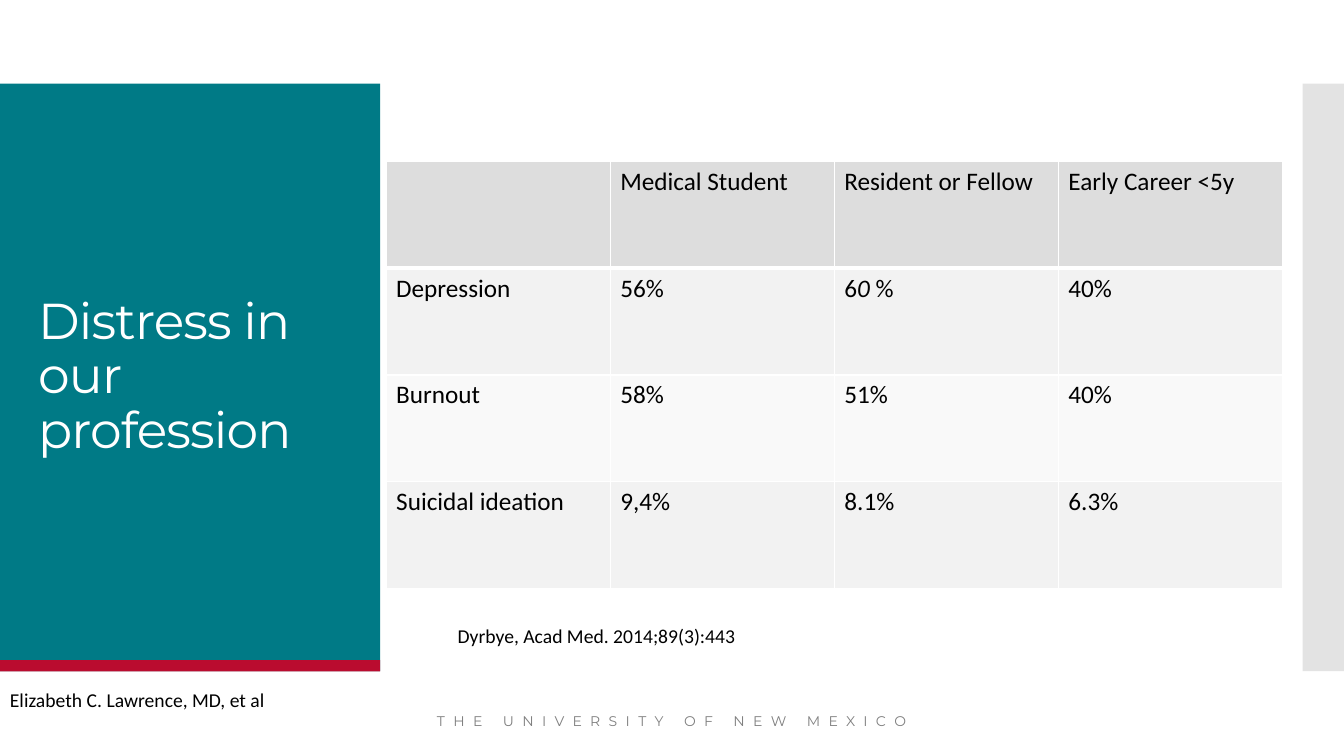
from lxml.etree import SubElement
from pptx import Presentation
from pptx.dml.color import RGBColor
from pptx.enum.shapes import MSO_SHAPE
from pptx.enum.text import MSO_ANCHOR, MSO_AUTO_SIZE, PP_ALIGN
from pptx.oxml.ns import qn
from pptx.util import Inches, Pt

COLORS = {
    "teal": "007A86",
    "red": "BA0C2F",
    "side": "C8C8C8",
    "white": "FFFFFF",
    "black": "000000",
    "footer": "808080",
    "header": "DDDDDD",
    "odd": "F2F2F2",
    "even": "F9F9F9",
}
ROWS = [
    ["", "Medical Student", "Resident or Fellow", "Early Career <5y"],
    ["Depression", "56%", "6*0 *%", "40%"],
    ["Burnout", "58%", "51%", "40%"],
    ["Suicidal ideation", "9,4%", "8.1%", "6.3%"],
]


def rgb(name):
    """Return the named colour."""
    return RGBColor.from_string(COLORS[name])


def write_text(frame, text, size, font="Calibri", color="black", spacing=0,
               align=PP_ALIGN.LEFT, line_spacing=1.0):
    """Write one formatted paragraph; parts between asterisks are italic."""
    paragraph = frame.paragraphs[0]
    paragraph.alignment = align
    paragraph.line_spacing = line_spacing
    paragraph.font.size = Pt(size)
    for index, part in enumerate(text.split("*")):
        if not part:
            continue
        run = paragraph.add_run()
        run.text = part
        run.font.size = Pt(size)
        run.font.name = font
        run.font.color.rgb = rgb(color)
        run.font.italic = index % 2 == 1
        if spacing:
            run.font._element.set("spc", str(round(spacing * 100)))


def add_text(slide, box, text, size, anchor=MSO_ANCHOR.TOP, wrap=True,
             grow=False, **text_format):
    """Add a text box holding one paragraph."""
    shape = slide.shapes.add_textbox(*map(Inches, box))
    frame = shape.text_frame
    frame.word_wrap = wrap
    frame.vertical_anchor = anchor
    frame.auto_size = MSO_AUTO_SIZE.SHAPE_TO_FIT_TEXT if grow else MSO_AUTO_SIZE.NONE
    write_text(frame, text, size, **text_format)


def add_panel(slide, box, color, opacity=100):
    """Add a plain filled rectangle."""
    shape = slide.shapes.add_shape(MSO_SHAPE.RECTANGLE, *map(Inches, box))
    shape.shadow.inherit = False
    shape.line.fill.background()
    shape.fill.solid()
    shape.fill.fore_color.rgb = rgb(color)
    if opacity < 100:
        color_element = shape._element.spPr.find(qn("a:solidFill"))[0]
        SubElement(color_element, qn("a:alpha"), val=str(opacity * 1000))


def add_border(cell, side, width):
    """Draw a white border on one side of a cell."""
    properties = cell._tc.get_or_add_tcPr()
    line = SubElement(properties, qn(f"a:ln{side}"), w=str(Pt(width)))
    fill = SubElement(line, qn("a:solidFill"))
    SubElement(fill, qn("a:srgbClr"), val=COLORS["white"])


def add_distress_table(slide, box):
    """Add the table of distress rates by career stage."""
    frame = slide.shapes.add_table(len(ROWS), len(ROWS[0]), *map(Inches, box))
    table = frame.table
    for row_index, row in enumerate(ROWS):
        fill = "header" if row_index == 0 else "odd" if row_index % 2 else "even"
        widths = {
            "L": 1,
            "R": 1,
            "T": 3 if row_index == 1 else 1,
            "B": 3 if row_index == 0 else 1,
        }
        for column_index, text in enumerate(row):
            cell = table.cell(row_index, column_index)
            for side, width in widths.items():
                add_border(cell, side, width)
            cell.fill.solid()
            cell.fill.fore_color.rgb = rgb(fill)
            write_text(cell.text_frame, text, 18)


def main():
    """Build the slide and save it."""
    presentation = Presentation()
    presentation.slide_width = Inches(13.33)
    presentation.slide_height = Inches(7.5)
    slide = presentation.slides.add_slide(presentation.slide_layouts[6])

    add_panel(slide, (0, 0.83, 3.77, 5.83), "teal")
    add_panel(slide, (12.92, 0.83, 0.41, 5.83), "side", opacity=50)
    add_panel(slide, (0, 6.55, 3.77, 0.11), "red")
    add_text(slide, (0.28, 1.23, 3.22, 5.03), "Distress in our profession", 36,
             anchor=MSO_ANCHOR.MIDDLE, font="Montserrat", color="white",
             spacing=-0.6, line_spacing=0.9)
    add_text(slide, (3.43, 6.95, 6.46, 0.4), "THE UNIVERSITY OF NEW MEXICO", 10,
             anchor=MSO_ANCHOR.MIDDLE, font="Montserrat", color="footer",
             spacing=6, align=PP_ALIGN.CENTER)
    add_text(slide, (4.44, 6.14, 3.22, 0.34), "Dyrbye, Acad Med. 2014;89(3):443", 14,
             grow=True)
    add_distress_table(slide, (3.83, 1.6, 8.89, 4.24))
    add_text(slide, (0, 6.78, 2.81, 0.34), "Elizabeth C. Lawrence, MD, et al", 14,
             wrap=False, grow=True)

    presentation.save("out.pptx")


if __name__ == "__main__":
    main()
